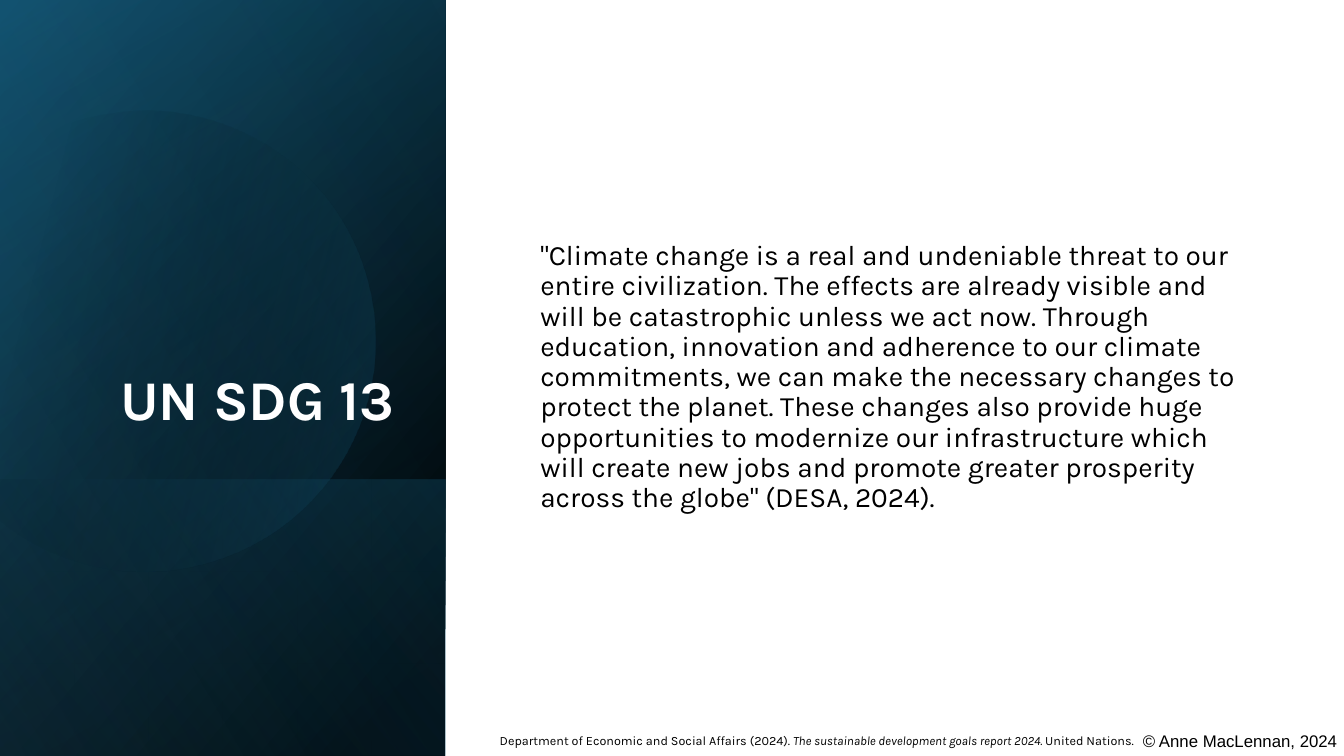
import math

import lxml.etree
import pptx
import pptx.dml.color
import pptx.enum.shapes
import pptx.enum.text
import pptx.oxml.ns
import pptx.util

Pt = pptx.util.Pt
RGBColor = pptx.dml.color.RGBColor
Anchor = pptx.enum.text.MSO_ANCHOR
Align = pptx.enum.text.PP_ALIGN
AutoSize = pptx.enum.text.MSO_AUTO_SIZE
RECTANGLE = pptx.enum.shapes.MSO_SHAPE.RECTANGLE
qn = pptx.oxml.ns.qn

WHITE = RGBColor(0xFF, 0xFF, 0xFF)
BLACK = RGBColor(0x00, 0x00, 0x00)
DEEP_BLUE = RGBColor(0x10, 0x48, 0x62)
TEAL = RGBColor(0x15, 0x60, 0x82)
SKY = RGBColor(0x46, 0xB1, 0xE1)

SLIDE_WIDTH, SLIDE_HEIGHT = 960, 540
PANEL_WIDTH = 318.24
FOOT_HEIGHT = 197.28

DISC_TILT = 343.9
DISC_CENTRE = (114.12, 240.84)
DISC_START = (107.28, 79.2)
DISC_CURVES = [
    [(177.12, 80.64), (241.2, 127.44), (261.36, 198)],
    [(286.56, 285.84), (236.16, 376.56), (149.04, 401.76)],
    [(94.32, 417.6), (38.16, 403.92), (-2.16, 370.08)],
    [(-10.8, 362.16)],
    [(-10.8, 126)],
    [(0, 115.92)],
    [(16.56, 102.24), (36, 92.16), (57.6, 85.68)],
    [(74.16, 81.36), (90.72, 79.2), DISC_START],
]

QUOTE = (
    '"Climate change is a real and undeniable threat to our entire civilization. '
    "The effects are already visible and will be catastrophic unless we act now. "
    "Through education, innovation and adherence to our climate commitments, we can "
    "make the necessary changes to protect the planet. These changes also provide "
    "huge opportunities to modernize our infrastructure which will create new jobs "
    'and promote greater prosperity across the globe" (DESA, 2024).'
)


def set_gradient(shape, stops, angle):
    """Fill with (position %, colour, opacity %) stops, angle clockwise in degrees."""
    shape.shadow.inherit = False
    shape.line.fill.background()
    shape.fill.background()
    properties = shape._element.spPr
    gradient = lxml.etree.Element(qn("a:gradFill"), rotWithShape="1")
    stop_list = lxml.etree.SubElement(gradient, qn("a:gsLst"))
    for position, color, opacity in stops:
        stop = lxml.etree.SubElement(stop_list, qn("a:gs"), pos=str(position * 1000))
        tint = lxml.etree.SubElement(stop, qn("a:srgbClr"), val=str(color))
        if opacity < 100:
            lxml.etree.SubElement(tint, qn("a:alpha"), val=str(opacity * 1000))
    lxml.etree.SubElement(gradient, qn("a:lin"), ang=str(angle * 60000), scaled="0")
    properties.replace(properties.find(qn("a:noFill")), gradient)


def add_side_panel(slide, top, height, stops, angle):
    """Cover the left column from top with a mirrored rectangle on its side."""
    offset = (height - PANEL_WIDTH) / 2
    panel = slide.shapes.add_shape(
        RECTANGLE, Pt(-offset), Pt(top + offset), Pt(height), Pt(PANEL_WIDTH)
    )
    panel.rotation = 90
    panel._element.spPr.find(qn("a:xfrm")).set("flipH", "1")
    set_gradient(panel, stops, angle)


def bezier_points(start, first, second, end, steps=24):
    for step in range(1, steps + 1):
        t = step / steps
        weights = ((1 - t) ** 3, 3 * t * (1 - t) ** 2, 3 * t**2 * (1 - t), t**3)
        yield tuple(
            sum(w * p[axis] for w, p in zip(weights, (start, first, second, end)))
            for axis in (0, 1)
        )


def untilt(point):
    """Turn a point back about the disc centre, so the shape can carry the tilt."""
    turn = math.radians(-DISC_TILT)
    x, y = point[0] - DISC_CENTRE[0], point[1] - DISC_CENTRE[1]
    return (
        Pt(DISC_CENTRE[0] + x * math.cos(turn) - y * math.sin(turn)),
        Pt(DISC_CENTRE[1] + x * math.sin(turn) + y * math.cos(turn)),
    )


def add_disc(slide, stops, angle):
    outline = [DISC_START]
    for curve in DISC_CURVES:
        outline += bezier_points(outline[-1], *curve) if len(curve) == 3 else curve
    start, *rest = map(untilt, outline)
    builder = slide.shapes.build_freeform(*start)
    builder.add_line_segments(rest, close=True)
    disc = builder.convert_to_shape()
    disc.rotation = DISC_TILT
    set_gradient(disc, stops, angle)


def add_run(paragraph, text, size, color=BLACK, font="Karla", bold=None, italic=None):
    run = paragraph.add_run()
    run.text = text
    run.font.name, run.font.size = font, Pt(size)
    run.font.bold, run.font.italic = bold, italic
    run.font.color.rgb = color


def place_placeholder(slide, placeholder, box, anchor, align):
    """Move a placeholder to the front and return its unbulleted first paragraph."""
    slide.shapes._spTree.append(placeholder._element)
    placeholder.left, placeholder.top, placeholder.width, placeholder.height = map(Pt, box)
    frame = placeholder.text_frame
    frame.word_wrap = True
    frame.auto_size = AutoSize.NONE
    frame.vertical_anchor = anchor
    paragraph = frame.paragraphs[0]
    properties = paragraph._p.get_or_add_pPr()
    properties.set("marL", "0")
    properties.set("indent", "0")
    lxml.etree.SubElement(properties, qn("a:buNone"))
    paragraph.alignment = align
    paragraph.line_spacing = 0.9
    paragraph.space_before = Pt(0)
    return paragraph


def add_note_line(slide, box):
    frame = slide.shapes.add_textbox(*map(Pt, box)).text_frame
    frame.word_wrap = True
    frame.auto_size = AutoSize.SHAPE_TO_FIT_TEXT
    return frame.paragraphs[0]


def main():
    deck = pptx.Presentation()
    deck.slide_width, deck.slide_height = Pt(SLIDE_WIDTH), Pt(SLIDE_HEIGHT)
    slide = deck.slides.add_slide(deck.slide_layouts[1])
    title, body = slide.placeholders

    backdrop = slide.shapes.add_shape(RECTANGLE, 0, 0, deck.slide_width, deck.slide_height)
    backdrop.shadow.inherit = False
    backdrop.fill.solid()
    backdrop.fill.fore_color.rgb = WHITE
    backdrop.line.fill.background()

    add_side_panel(slide, 0, SLIDE_HEIGHT, [(8, BLACK, 100), (100, DEEP_BLUE, 100)], 50)
    add_side_panel(slide, 0, SLIDE_HEIGHT, [(0, BLACK, 0), (99, TEAL, 46)], 30)
    add_side_panel(slide, SLIDE_HEIGHT - FOOT_HEIGHT, FOOT_HEIGHT,
                   [(2, TEAL, 29), (100, BLACK, 30)], 130)
    add_disc(slide, [(29, BLACK, 0), (100, TEAL, 43)], 30)
    add_side_panel(slide, 0, SLIDE_HEIGHT, [(0, BLACK, 0), (99, SKY, 11)], 120)

    heading = place_placeholder(
        slide, title, (36.72, 46.08, 252, 266.4), Anchor.BOTTOM, Align.RIGHT
    )
    add_run(heading, "UN SDG 13", 40, WHITE, bold=True)
    quote = place_placeholder(
        slide, body, (378.72, 51.12, 516.24, 437.04), Anchor.MIDDLE, Align.LEFT
    )
    add_run(quote, QUOTE, 20)

    reference = add_note_line(slide, (349.92, 519.84, 468, 18))
    add_run(reference, "Department of Economic and Social Affairs (2024). ", 9)
    add_run(reference, "The sustainable development goals report 2024.", 9, italic=True)
    add_run(reference, " United Nations.", 9)
    rights = add_note_line(slide, (809.28, 518.4, 216, 21.6))
    add_run(rights, "© Anne MacLennan, 2024", 12, font="Arial")

    deck.save("out.pptx")


if __name__ == "__main__":
    main()
